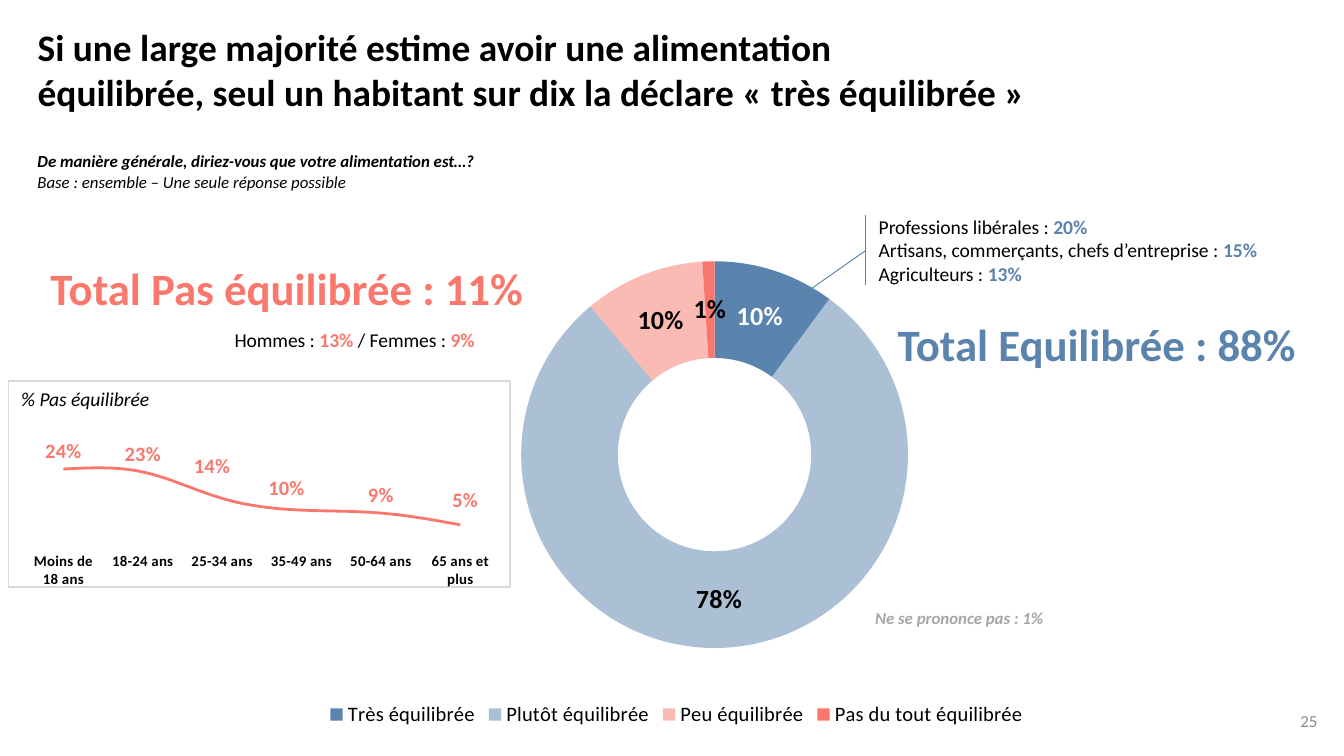
from dataclasses import dataclass
from lxml import etree
from pptx import Presentation, util as u
from pptx.chart.data import CategoryChartData
from pptx.dml.color import RGBColor
from pptx.enum import chart as ch, shapes, text
from pptx.oxml import parse_xml
from pptx.oxml.ns import nsdecls, qn

COLS, ROWS = 100, 56.25
UNIT = u.Inches(0.1)


@dataclass(frozen=True)
class Theme:
    font: str = "Calibri"
    ink: str = "000000"
    white: str = "FFFFFF"
    blue: str = "5A83AD"
    coral: str = "F9786D"
    grey: str = "A6A6A6"
    page: str = "8C8C8C"
    frame: str = "D9D9D9"
    title: float = 20
    total: float = 24
    share: float = 14
    label: float = 11
    body: float = 10.5
    note: float = 9
    axis: float = 8


T = Theme()
LEFT, RIGHT = text.PP_ALIGN.LEFT, text.PP_ALIGN.RIGHT
TOP, MID = text.MSO_ANCHOR.TOP, text.MSO_ANCHOR.MIDDLE


def emu(*cells):
    return [u.Emu(round(c * UNIT)) for c in cells]


def style(font, size, color=T.ink, bold=False, italic=False):
    font.name, font.size = T.font, u.Pt(size)
    font.bold, font.italic = bold, italic
    font.color.rgb = RGBColor.from_string(color)


def write(frame, lines, size, color=T.ink, bold=False, italic=False,
          align=LEFT, anchor=TOP):
    """Fill a frame; a line is a string or a list of (text, accent) pairs."""
    frame.word_wrap, frame.vertical_anchor = True, anchor
    for i, line in enumerate(lines):
        par = frame.add_paragraph() if i else frame.paragraphs[0]
        par.alignment = align
        style(par.font, size, color, bold, italic)
        for words, accent in [(line, None)] if isinstance(line, str) else line:
            run = par.add_run()
            run.text = words
            if accent:
                run.font.bold = True
                run.font.color.rgb = RGBColor.from_string(accent)


def put(slide, box, lines, size, **look):
    area = slide.shapes.add_textbox(*emu(*box))
    write(area.text_frame, lines, size, **look)
    return area


def rule(slide, *ends):
    line = slide.shapes.add_connector(shapes.MSO_CONNECTOR.STRAIGHT, *emu(*ends))
    line.line.color.rgb = RGBColor.from_string(T.blue)
    line.line.width = u.Pt(0.5)
    etree.SubElement(line._element.spPr, qn("a:effectLst"))
    return line


def layout(**parts):
    node = parse_xml(f"<c:layout {nsdecls('c')}><c:manualLayout/></c:layout>")
    for tag, val in parts.items():
        etree.SubElement(node[0], qn(f"c:{tag}")).set("val", str(val))
    return node


def plot(slide, box, kind, data, inner):
    """Add a chart whose inner plot area takes the given shares of the box."""
    sets = CategoryChartData(number_format="0%")
    sets.categories = data.keys()
    sets.add_series("Series 1", data.values())
    chart = slide.shapes.add_chart(kind, *emu(*box), sets).chart
    chart.has_title = False
    style(chart.font, T.label)
    area = chart.element.xpath("c:chart/c:plotArea")[0]
    for old in area.findall(qn("c:layout")):
        area.remove(old)
    x, y, w, h = inner
    area.insert(0, layout(layoutTarget="inner", xMode="edge", yMode="edge",
                          x=x, y=y, w=w, h=h))
    return chart


def tag(chart, size, color):
    """Show values as bold labels without leader lines."""
    labels = chart.plots[0].series[0].data_labels
    labels.show_value = True
    labels.number_format, labels.number_format_is_linked = "0%", False
    style(labels.font, size, color, True)
    for lead in chart.element.xpath("//c:showLeaderLines"):
        lead.set("val", "0")
    return labels


def head(slide, box):
    x, y, w, h = box
    title = slide.shapes.title
    title.left, title.top, title.width, title.height = emu(x, y, w, 7.7)
    write(title.text_frame, [
        "Si une large majorité estime avoir une alimentation",
        "équilibrée, seul un habitant sur dix la déclare « très équilibrée »",
    ], T.title, bold=True)
    ask = put(slide, (x, y + h - 4.1, w, 4.1), [
        "De manière générale, diriez-vous que votre alimentation est…?",
        "Base : ensemble – Une seule réponse possible",
    ], T.note, italic=True, anchor=MID)
    ask.text_frame.paragraphs[0].font.bold = True


def ring(slide, box):
    data = {"Très équilibrée": 0.1, "Plutôt équilibrée": 0.78,
            "Peu équilibrée": 0.1, "Pas du tout équilibrée": 0.01}
    chart = plot(slide, box, ch.XL_CHART_TYPE.DOUGHNUT, data, (0.37, 0.05, 0.32, 0.78))
    chart.has_legend = True
    chart.legend.position = ch.XL_LEGEND_POSITION.BOTTOM
    chart.legend.include_in_layout = False
    style(chart.legend.font, T.label)
    tag(chart, T.share, T.ink)
    points = chart.plots[0].series[0].points
    for i, color in enumerate((T.blue, T.blue, T.coral, T.coral)):
        fill = points[i].format.fill
        fill.solid()
        fill.fore_color.rgb = RGBColor.from_string(color)
    for i in (1, 2):
        tint = chart.element.xpath(f"//c:dPt[c:idx/@val={i}]//a:srgbClr")[0]
        etree.SubElement(tint, qn("a:alpha")).set("val", "50000")
    style(points[0].data_label.font, T.share, T.white, True)


def trend(slide, box):
    data = {"Moins de 18 ans": 0.24, "18-24 ans": 0.23, "25-34 ans": 0.14,
            "35-49 ans": 0.1, "50-64 ans": 0.09, "65 ans et plus": 0.05}
    chart = plot(slide, box, ch.XL_CHART_TYPE.LINE, data, (0.03, 0.2, 0.95, 0.57))
    chart.has_legend = False
    cats, vals = chart.category_axis, chart.value_axis
    cats.format.line.fill.background()
    style(cats.tick_labels.font, T.axis, bold=True)
    vals.minimum_scale, vals.maximum_scale = 0, 0.4
    vals.has_major_gridlines = vals.visible = False
    line = chart.plots[0].series[0]
    line.smooth = True
    line.marker.style = ch.XL_MARKER_STYLE.NONE
    line.format.line.color.rgb = RGBColor.from_string(T.coral)
    line.format.line.width = u.Pt(1.5)
    tag(chart, T.label, T.coral).position = ch.XL_LABEL_POSITION.ABOVE
    for i, (x, y) in {2: (-0.02, -0.07), 3: (-0.03, -0.02), 5: (0.01, -0.03)}.items():
        label = line.points[i].data_label
        style(label.font, T.label, T.coral, True)
        label.position = ch.XL_LABEL_POSITION.ABOVE
        idx = chart.element.xpath(f"//c:dLbl/c:idx[@val={i}]")[0]
        idx.addnext(layout(x=x, y=y))
    chart.element.find(qn("c:txPr")).addprevious(parse_xml(
        f"<c:spPr {nsdecls('c', 'a')}><a:noFill/><a:ln w='9525'><a:solidFill>"
        f"<a:srgbClr val='{T.frame}'/></a:solidFill></a:ln></c:spPr>"))
    x, y, w, _ = box
    put(slide, (x, y, w * 0.62, 2.8), ["% Pas équilibrée"], T.body, italic=True)


def minus(slide, box):
    x, y, w, h = box
    put(slide, (x, y, w, 5), ["Total Pas équilibrée : 11%"], T.total,
        color=T.coral, bold=True, align=RIGHT)
    put(slide, (x, y + 5, w - 3.6, h - 5), [
        [("Hommes : ", None), ("13% ", T.coral), ("/ Femmes : ", None), ("9%", T.coral)],
    ], T.body, align=RIGHT)


def plus(slide, box):
    x, y, w, h = box
    jobs = {"Professions libérales": 20, "Artisans, commerçants, chefs d’entreprise": 15,
            "Agriculteurs": 13}
    notes = put(slide, (x, y, w - 1.5, h / 2), [
        [(f"{job} : ", None), (f"{val}%", T.blue)] for job, val in jobs.items()], T.body)
    rule(slide, x, y + 0.5, x, y + h / 2 - 0.6)
    rule(slide, x - 4.2, y + 6.1, x, y + h / 4).end_connect(notes, 1)
    put(slide, (x + 1.4, y + h - 5, w - 1.4, 5), ["Total Equilibrée : 88%"],
        T.total, color=T.blue, bold=True)


def foot(slide, box):
    x, y, w, h = box
    put(slide, (x, y, 20.1, 2.5), ["Ne se prononce pas : 1%"], T.note,
        color=T.grey, bold=True, italic=True, align=RIGHT)
    put(slide, (x + w - 22.5, y + h - 3, 22.5, 3), ["25"], T.note,
        color=T.page, align=RIGHT, anchor=MID)


def main():
    deck = Presentation()
    deck.slide_width, deck.slide_height = emu(COLS, ROWS)
    slide = deck.slides.add_slide(deck.slide_layouts[5])
    head(slide, (1.8, 1.3, 85.8, 13.5))
    ring(slide, (3.3, 17.6, 94.1, 36.9))
    minus(slide, (1.7, 18.9, 38.2, 7.8))
    plus(slide, (64.4, 15.5, 34.5, 12.6))
    trend(slide, (0.6, 28.3, 37.4, 15.5))
    foot(slide, (58.5, 44.7, 40.5, 10.4))
    deck.save("out.pptx")


if __name__ == "__main__":
    main()
